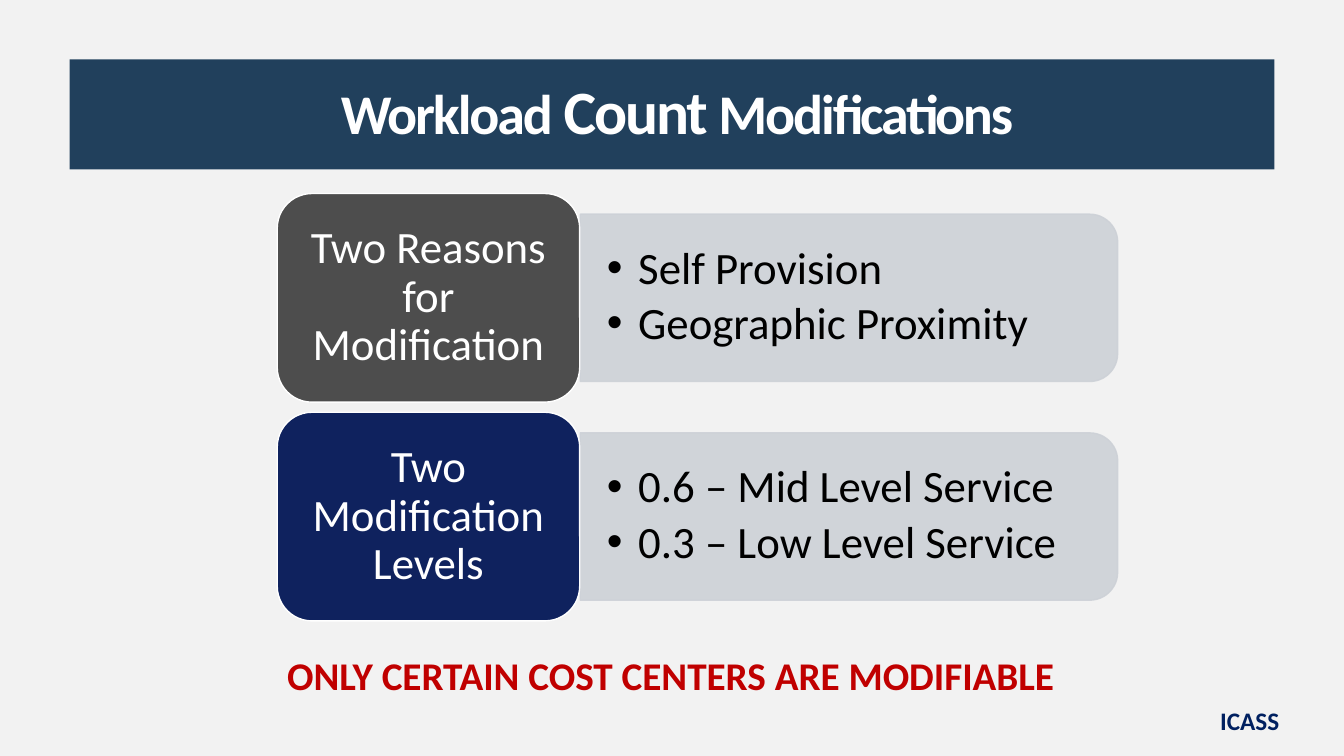
from lxml import etree
from pptx import Presentation
from pptx import util as u
from pptx.dml.color import RGBColor
from pptx.enum import shapes, text
from pptx.oxml.ns import qn

PAPER = RGBColor(0xF2, 0xF2, 0xF2)
PANEL = RGBColor(0xCD, 0xD1, 0xD7)
GREY = RGBColor(0x4D, 0x4D, 0x4D)
NAVY = RGBColor(0x0F, 0x22, 0x5E)
BANNER = RGBColor(0x21, 0x40, 0x5C)
FOOTER = RGBColor(0x00, 0x20, 0x60)
RED = RGBColor(0xC0, 0x00, 0x00)
WHITE = RGBColor(0xFF, 0xFF, 0xFF)
BLACK = RGBColor(0x00, 0x00, 0x00)

RECT = shapes.MSO_SHAPE.RECTANGLE
ROUNDED = shapes.MSO_SHAPE.ROUNDED_RECTANGLE
TWO_ROUNDED = shapes.MSO_SHAPE.ROUND_2_SAME_RECTANGLE
CENTER = text.PP_ALIGN.CENTER
MIDDLE = text.MSO_ANCHOR.MIDDLE


def px(n):
    """100 px to the inch."""
    return u.Emu(n * 9144)


class Deck:
    font = "Calibri"

    def __init__(self, width, height):
        self.prs = Presentation()
        self.prs.slide_width, self.prs.slide_height = px(width), px(height)
        self.slide = self.prs.slides.add_slide(self.prs.slide_layouts[6])
        fill = self.slide.background.fill
        fill.solid()
        fill.fore_color.rgb = PAPER

    def shape(self, kind, box, fill, line=None, opacity=100):
        shape = self.slide.shapes.add_shape(kind, *map(px, box))
        shape.shadow.inherit = False
        shape.fill.solid()
        shape.fill.fore_color.rgb = fill
        if line is None:
            shape.line.fill.background()
        else:
            shape.line.color.rgb = line
            shape.line.width = u.Pt(1)
        if opacity < 100:
            for color in shape.element.spPr.iter(qn("a:srgbClr")):
                etree.SubElement(color, qn("a:alpha"), val=str(opacity * 1000))
        return shape

    def textbox(self, box):
        return self.slide.shapes.add_textbox(*map(px, box))

    def frame(self, shape, inset=(10, 5), anchor=MIDDLE):
        frame = shape.text_frame
        frame.word_wrap = True
        frame.vertical_anchor = anchor
        frame.margin_left = frame.margin_right = px(inset[0])
        frame.margin_top = frame.margin_bottom = px(inset[1])
        return frame

    def style(self, paragraph, size, color, bold=False, align=None, spacing=None):
        paragraph.alignment = align
        paragraph.line_spacing = spacing
        font = paragraph.font
        font.name, font.size, font.bold = self.font, u.Pt(size), bold
        font.color.rgb = color

    def label(self, shape, words, *style, inset=(10, 5), anchor=MIDDLE, **more):
        paragraph = self.frame(shape, inset, anchor).paragraphs[0]
        paragraph.add_run().text = words
        self.style(paragraph, *style, **more)

    def bullets(self, box, items):
        frame = self.frame(self.textbox(box), (27, 14))
        for i, item in enumerate(items):
            paragraph = frame.add_paragraph() if i else frame.paragraphs[0]
            paragraph.add_run().text = item
            paragraph.space_after = u.Pt(5)
            props = paragraph._p.get_or_add_pPr()
            props.set("marL", str(px(31)))
            props.set("indent", str(-px(31)))
            # Line spacing must precede the bullet elements
            paragraph.line_spacing = 0.9
            etree.SubElement(props, qn("a:buFont"), typeface="Arial")
            etree.SubElement(props, qn("a:buChar"), char="•")
            self.style(paragraph, 32, BLACK, spacing=0.9)

    def title(self, box, pieces):
        paragraph = self.frame(self.textbox(box), (0, 0)).paragraphs[0]
        for words, size in pieces:
            run = paragraph.add_run()
            run.text = words
            run.font.size = u.Pt(size)
            run._r.get_or_add_rPr().set("spc", "-150")
        self.style(paragraph, 40, WHITE, bold=True, align=CENTER, spacing=0.9)

    def topic(self, top, color, heading, items):
        """A heading block with its bullet panel to the right."""
        panel = self.shape(TWO_ROUNDED, (759, top - 163, 166, 533), PANEL, PANEL, 90)
        panel.rotation = 90
        self.bullets((575, top + 28, 525, 150), items)
        block = self.shape(ROUNDED, (275, top, 300, 207), color, WHITE)
        self.label(block, heading, 32, WHITE, inset=(23, 17), align=CENTER, spacing=0.9)


def main():
    deck = Deck(1333, 750)

    # Topics
    topics = [
        (GREY, "Two Reasons for Modification", ["Self Provision", "Geographic Proximity"]),
        (NAVY, "Two Modification Levels",
         ["0.6 – Mid Level Service", "0.3 – Low Level Service"]),
    ]
    for row, topic in enumerate(topics):
        deck.topic(192 + row * 217, *topic)

    # Closing note and footer
    note = deck.textbox((275, 641, 948, 57))
    deck.label(note, "ONLY CERTAIN COST CENTERS ARE MODIFIABLE", 28, RED, bold=True,
               anchor=text.MSO_ANCHOR.TOP)
    footer = deck.shape(RECT, (1165, 686, 149, 57), PAPER)
    deck.label(footer, "ICASS", 18, FOOTER, bold=True, align=CENTER)

    # Title banner
    deck.shape(RECT, (69, 59, 1195, 109), BANNER)
    deck.title((245, 77, 853, 73),
               [("Workload ", 40), ("Count", 44), (" Modifications", 40)])

    deck.prs.save("out.pptx")


if __name__ == "__main__":
    main()
